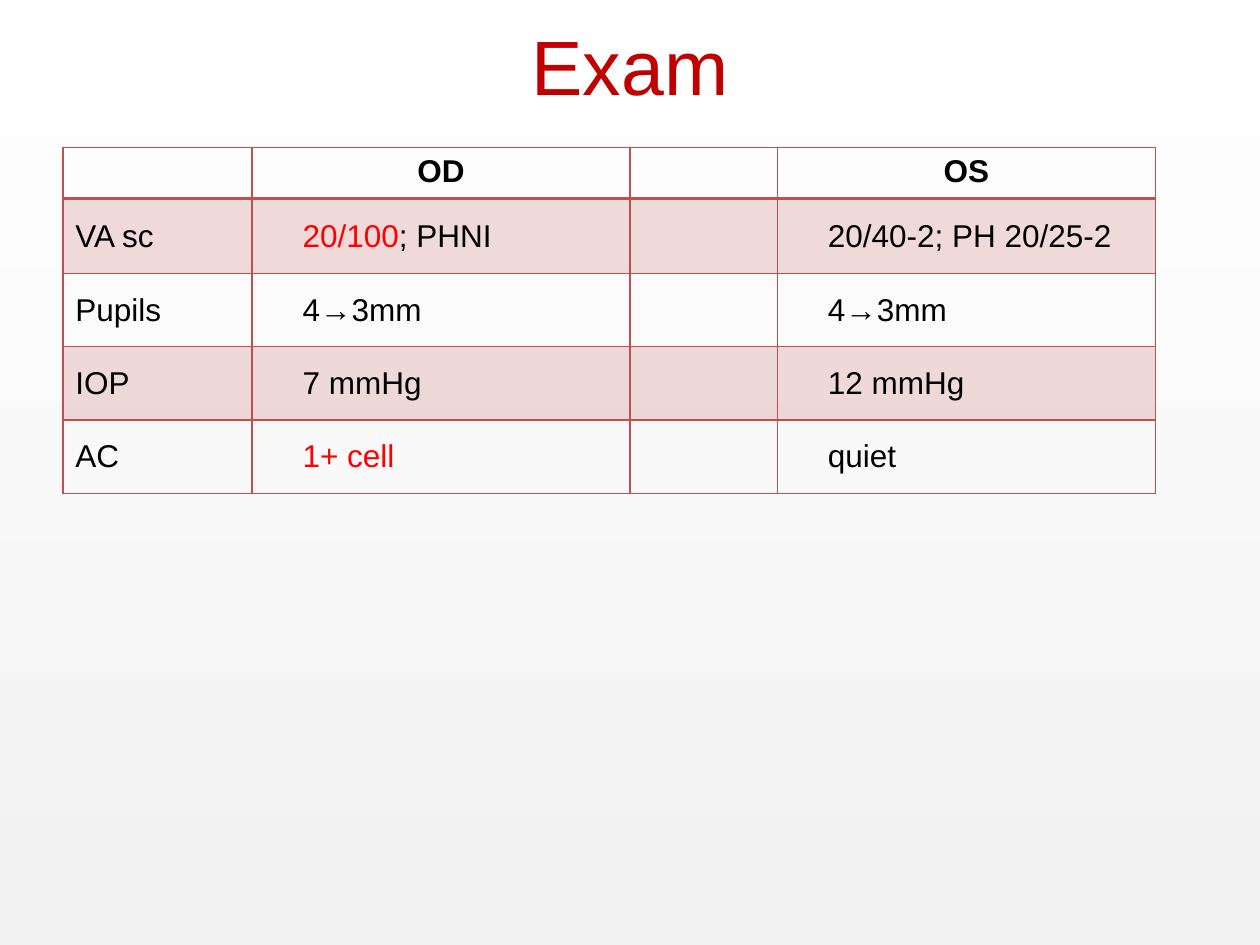
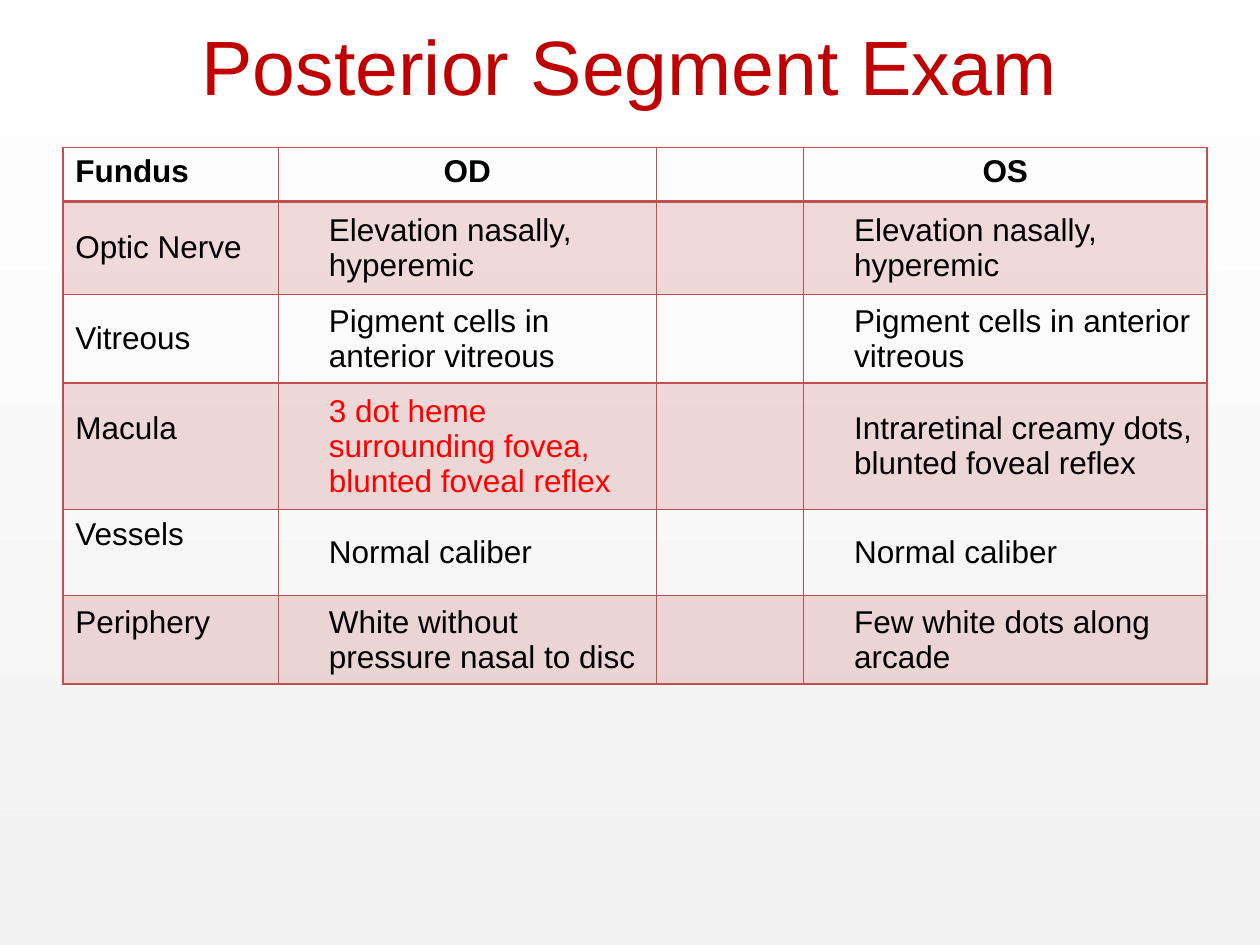
from lxml import etree
from pptx import Presentation, util as u
from pptx.dml.color import RGBColor
from pptx.enum import shapes, text
from pptx.oxml.ns import qn

HUES = {"title": "C00000", "grid": "C0504D", "ink": "000000",
        "alert": "FF0000", "top": "FFFFFF", "foot": "F2F2F2"}
TITLE = {"size": u.Pt(44), "name": "Arial", "bold": False}
HEAD = {"size": u.Pt(18), "name": "Arial", "bold": True}
BODY = {**HEAD, "bold": False}
PADS = {"margin_left": u.Cm(0.25), "margin_right": u.Cm(0.25),
        "margin_top": u.Cm(0.13), "margin_bottom": u.Cm(0.13)}
EYE = {**PADS, "margin_left": u.Cm(1.02)}
RAISED = {**PADS, "margin_bottom": u.Cm(0.84)}

EXAM = {
    "title": "Exam",
    "cols": [3.81, 7.62, 2.97, 7.62],
    "rows": [1.04, 1.5, 1.48, 1.48, 1.48],
    "alerts": {"20/100", "1+ cell"},
    "raised": set(),
    "cells": [
        ("", "OD", "", "OS"),
        ("VA sc", "20/100|; PHNI", "", "20/40-2; PH 20/25-2"),
        ("Pupils", "4→3mm", "", "4→3mm"),
        ("IOP", "7 mmHg", "", "12 mmHg"),
        ("AC", "1+ cell", "", "quiet"),
    ],
}
FUNDUS = {
    "title": "Posterior Segment Exam",
    "cols": [4.34, 7.62, 2.97, 8.13],
    "rows": [1.09, 1.88, 1.68, 2.39, 1.68, 1.68],
    "alerts": {"3 dot heme surrounding fovea, blunted foveal reflex"},
    "raised": {"Macula", "Vessels", "Periphery"},
    "cells": [
        ("Fundus", "OD", "", "OS"),
        ("Optic Nerve", "Elevation nasally, hyperemic", "",
         "Elevation nasally,\nhyperemic"),
        ("Vitreous", "Pigment cells in anterior vitreous", "",
         "Pigment cells in anterior vitreous"),
        ("Macula", "3 dot heme surrounding fovea, blunted foveal reflex", "",
         "Intraretinal creamy dots, blunted foveal reflex"),
        ("Vessels", "Normal caliber", "", "Normal caliber"),
        ("Periphery", "White without pressure nasal to disc", "",
         "Few white dots along arcade"),
    ],
}


def hue(name):
    return RGBColor.from_string(HUES[name])


def apply(item, form):
    for key, value in form.items():
        setattr(item, key, value)


def write(frame, words, form, align, ink, alerts=()):
    for i, line in enumerate(words.split("\n")):
        para = frame.add_paragraph() if i else frame.paragraphs[0]
        para.alignment = align
        apply(para.font, form)
        for part in line.split("|"):
            run = para.add_run()
            run.text = part
            apply(run.font, form)
            run.font.color.rgb = hue("alert" if part in alerts else ink)


def add_back(slide, width, height):
    back = slide.shapes.add_shape(shapes.MSO_SHAPE.RECTANGLE, 0, 0, width, height)
    back.shadow.inherit = False
    back.line.fill.background()
    back.fill.gradient()
    back.fill.gradient_angle = 90
    for stop, name, place in zip(back.fill.gradient_stops, ("foot", "top"), (0, 1)):
        stop.color.rgb = hue(name)
        stop.position = place


def add_title(slide, words, left, top, width, height):
    frame = slide.shapes.add_textbox(left, top, width, height).text_frame
    apply(frame, {"word_wrap": True, "vertical_anchor": text.MSO_ANCHOR.MIDDLE})
    write(frame, words, TITLE, text.PP_ALIGN.CENTER, "title")


def add_edges(cell, row):
    props = cell._tc.get_or_add_tcPr()
    thick = {(0, "lnB"), (1, "lnT")}
    for i, side in enumerate(("lnL", "lnR", "lnT", "lnB")):
        points = 2 if (row, side) in thick else 1
        line = etree.Element(qn(f"a:{side}"), w=str(u.Pt(points)))
        solid = etree.SubElement(line, qn("a:solidFill"))
        etree.SubElement(solid, qn("a:srgbClr"), val=HUES["grid"])
        props.insert(i, line)


def paint(cell, row):
    if row % 2:
        cell.fill.solid()
        cell.fill.fore_color.rgb = hue("grid")
        color = cell._tc.tcPr.find(f"{qn('a:solidFill')}/{qn('a:srgbClr')}")
        etree.SubElement(color, qn("a:alpha"), val="20000")
    else:
        cell.fill.background()
    add_edges(cell, row)


def add_grid(slide, data, left, top):
    cols, rows = data["cols"], data["rows"]
    grid = slide.shapes.add_table(len(rows), len(cols), left, top,
                                  u.Cm(sum(cols)), u.Cm(sum(rows))).table
    apply(grid, {"first_row": False, "horz_banding": False})
    for col, width in zip(grid.columns, cols):
        col.width = u.Cm(width)
    for row, height in zip(grid.rows, rows):
        row.height = u.Cm(height)
    for r, line in enumerate(data["cells"]):
        for c, words in enumerate(line):
            cell = grid.cell(r, c)
            paint(cell, r)
            pads = EYE if r and c in (1, 3) else RAISED if words in data["raised"] else PADS
            apply(cell, pads)
            cell.vertical_anchor = text.MSO_ANCHOR.MIDDLE if r else text.MSO_ANCHOR.TOP
            align = text.PP_ALIGN.LEFT if r or not c else text.PP_ALIGN.CENTER
            if words:
                write(cell.text_frame, words, BODY if r else HEAD, align, "ink", data["alerts"])


def add_exam(deck, data):
    slide = deck.slides.add_slide(deck.slide_layouts[6])
    add_back(slide, deck.slide_width, deck.slide_height)
    add_title(slide, data["title"], u.Cm(1.27), u.Cm(-0.28), u.Cm(22.86), u.Cm(3.18))
    add_grid(slide, data, u.Cm(1.27), u.Cm(2.97))


def main():
    deck = Presentation()
    apply(deck, {"slide_width": u.Cm(25.4), "slide_height": u.Cm(19.05)})
    for data in (EXAM, FUNDUS):
        add_exam(deck, data)
    deck.save("out.pptx")


if __name__ == "__main__":
    main()
